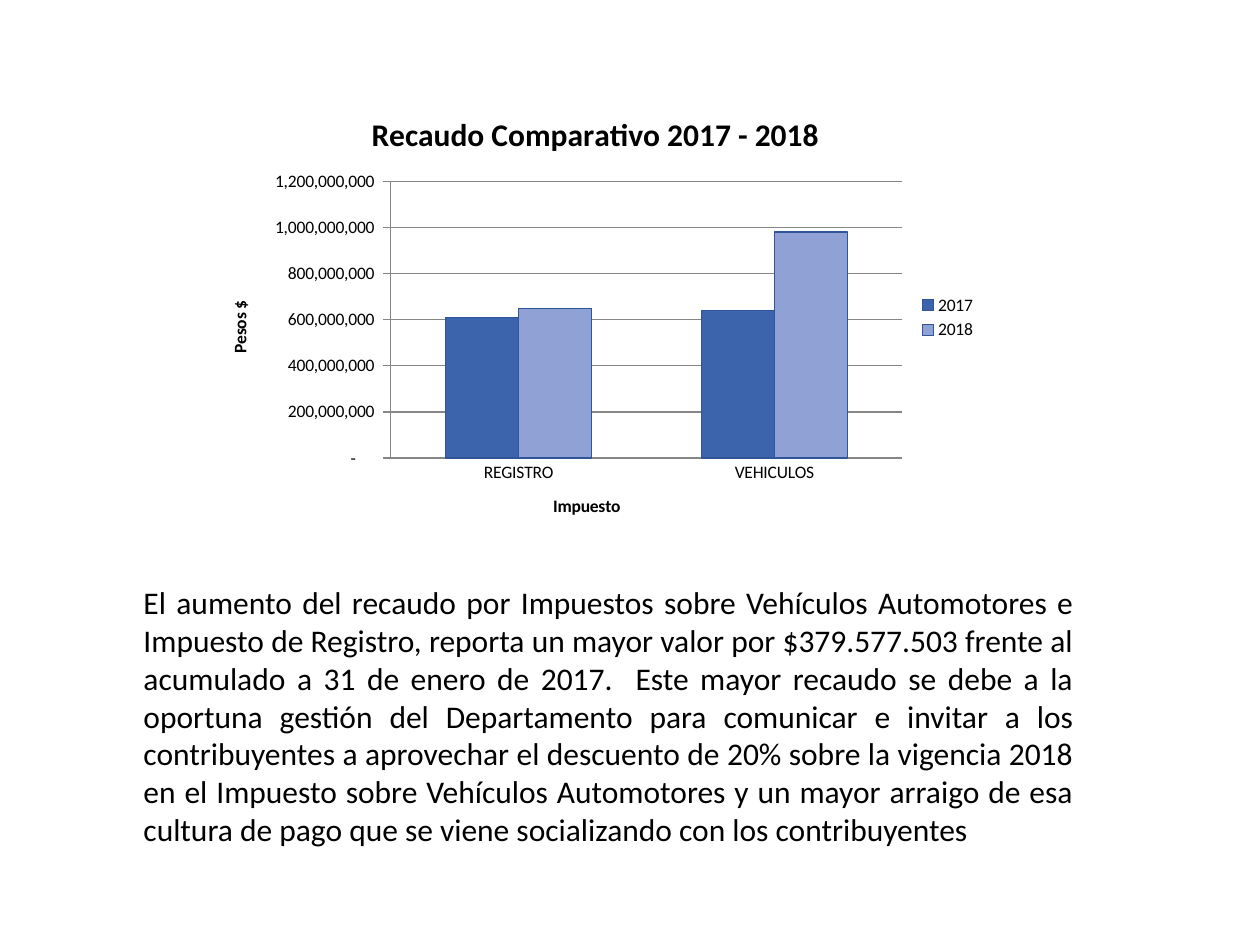
from lxml.etree import SubElement
from pptx import Presentation
from pptx.chart.data import CategoryChartData
from pptx.dml.color import RGBColor
from pptx.enum.chart import XL_CHART_TYPE, XL_LEGEND_POSITION, XL_TICK_MARK
from pptx.enum.text import MSO_AUTO_SIZE, PP_ALIGN
from pptx.oxml.ns import qn
from pptx.util import Inches, Pt

FONT = "Calibri"
BLACK = RGBColor(0x00, 0x00, 0x00)
GRID_GRAY = RGBColor(0x86, 0x86, 0x86)
BAR_LINE = RGBColor(0x2F, 0x55, 0x97)
BAR_FILLS = (RGBColor(0x3C, 0x64, 0xAD), RGBColor(0x90, 0xA1, 0xD5))
NUMBER_FORMAT = '_ * #,##0_ ;_ * \\-#,##0_ ;_ * "-"??_ ;_ '
CATEGORIES = ("REGISTRO", "VEHICULOS")
REVENUE = {"2017": (610000000, 640000000), "2018": (650000000, 980000000)}
COMMENT = (
    "El aumento del recaudo por Impuestos sobre Vehículos Automotores e Impuesto de "
    "Registro, reporta un mayor valor por $379.577.503 frente al acumulado a 31 de enero "
    "de 2017.  Este mayor recaudo se debe a la oportuna gestión del Departamento para "
    "comunicar e invitar a los contribuyentes a aprovechar el descuento de 20% sobre la "
    "vigencia 2018 en el Impuesto sobre Vehículos Automotores y un mayor arraigo de esa "
    "cultura de pago que se viene socializando con los contribuyentes"
)


def style_font(font, size, bold=False):
    """Apply the slide's typeface and text colour."""
    font.name = FONT
    font.size = Pt(size)
    font.bold = bold
    font.color.rgb = BLACK


def set_title(owner, text, size):
    """Give a chart or an axis a bold title."""
    frame = (owner.chart_title if hasattr(owner, "chart_title") else owner.axis_title).text_frame
    frame.text = text
    style_font(frame.paragraphs[0].runs[0].font, size, bold=True)


def set_plot_layout(chart, **fractions):
    """Fix the inner plot area as fractions of the chart box."""
    plot_area = chart.plots[0]._element.getparent()
    layout = plot_area.find(qn("c:layout"))
    if layout is None:
        layout = SubElement(plot_area, qn("c:layout"))
        plot_area.insert(0, layout)
    manual = SubElement(layout, qn("c:manualLayout"))
    settings = {"layoutTarget": "inner", "xMode": "edge", "yMode": "edge", **fractions}
    for name, value in settings.items():
        SubElement(manual, qn(f"c:{name}")).set("val", str(value))


def add_revenue_chart(page, left, top, width, height):
    """Place the clustered column chart in the given box."""
    data = CategoryChartData(number_format=NUMBER_FORMAT)
    data.categories = CATEGORIES
    for year, values in REVENUE.items():
        data.add_series(year, values)
    chart = page.shapes.add_chart(
        XL_CHART_TYPE.COLUMN_CLUSTERED, left, top, width, height, data
    ).chart
    style_font(chart.font, 10)
    set_title(chart, "Recaudo Comparativo 2017 - 2018", 18)
    chart.chart_title.include_in_layout = False
    chart.has_legend = True
    chart.legend.position = XL_LEGEND_POSITION.RIGHT
    chart.legend.include_in_layout = False

    plot = chart.plots[0]
    plot.gap_width = 150
    plot.overlap = 0
    plot.vary_by_categories = False
    for series, color in zip(plot.series, BAR_FILLS):
        series.format.fill.solid()
        series.format.fill.fore_color.rgb = color
        series.format.line.color.rgb = BAR_LINE
        series.format.line.width = Pt(0.75)

    category_axis, value_axis = chart.category_axis, chart.value_axis
    set_title(category_axis, "Impuesto", 10)
    set_title(value_axis, "Pesos $", 10)
    category_axis.major_tick_mark = XL_TICK_MARK.NONE
    value_axis.major_tick_mark = XL_TICK_MARK.CROSS
    value_axis.minimum_scale = 0
    value_axis.maximum_scale = 1200000000
    value_axis.major_unit = 200000000
    value_axis.has_major_gridlines = True
    value_axis.tick_labels.number_format = NUMBER_FORMAT
    value_axis.tick_labels.number_format_is_linked = False
    for part in (category_axis, value_axis, value_axis.major_gridlines):
        part.format.line.color.rgb = GRID_GRAY
        part.format.line.width = Pt(0.75)
    set_plot_layout(chart, x=0.24, y=0.2, w=0.65, h=0.61)


def add_comment(page, left, top, width, height):
    """Place the justified comment in the given box."""
    frame = page.shapes.add_textbox(left, top, width, height).text_frame
    frame.word_wrap = True
    frame.auto_size = MSO_AUTO_SIZE.SHAPE_TO_FIT_TEXT
    frame.text = COMMENT
    paragraph = frame.paragraphs[0]
    paragraph.alignment = PP_ALIGN.JUSTIFY
    style_font(paragraph.runs[0].font, 18)


def main():
    """Build the one-slide deck and save it."""
    deck = Presentation()
    deck.slide_width, deck.slide_height = Inches(10), Inches(7.5)
    page = deck.slides.add_slide(deck.slide_layouts[6])
    add_revenue_chart(page, Inches(1.6), Inches(0.72), Inches(6.25), Inches(3.6))
    add_comment(page, Inches(1.04), Inches(4.58), Inches(7.58), Inches(2.22))
    deck.save("out.pptx")


if __name__ == "__main__":
    main()
